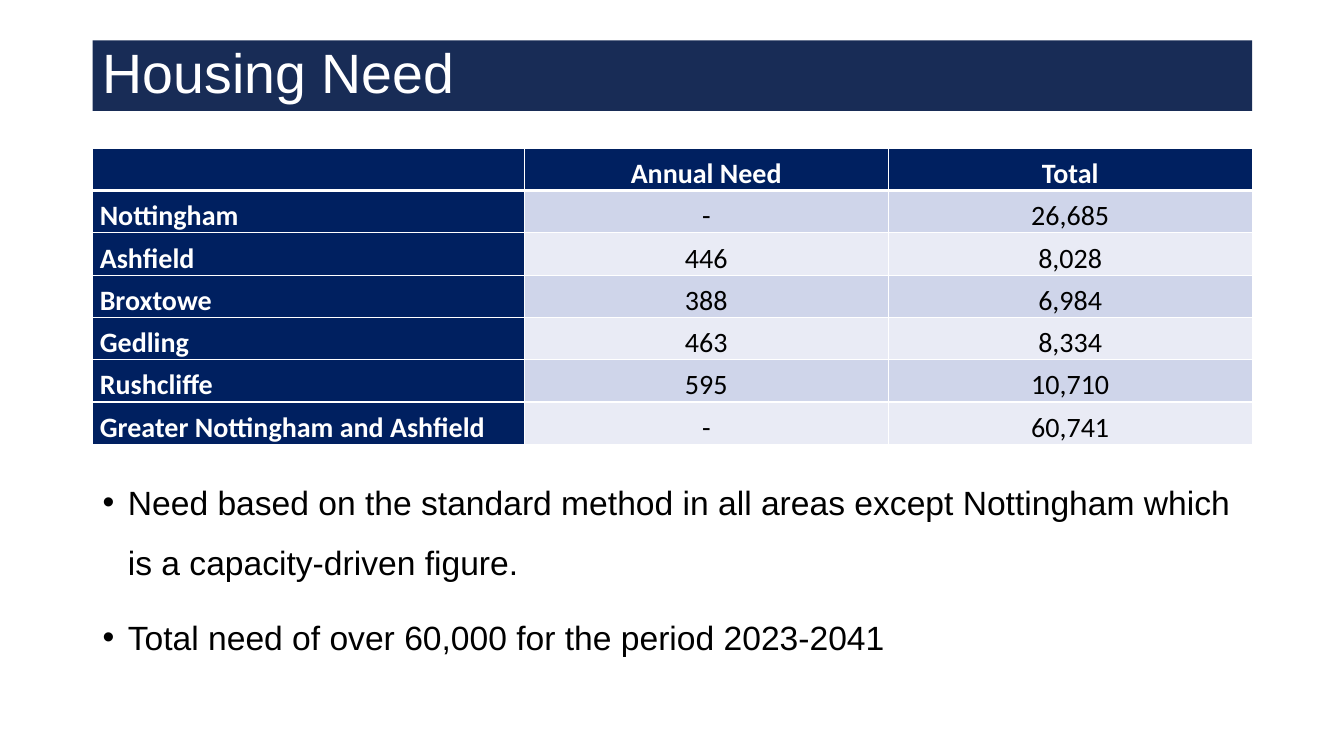
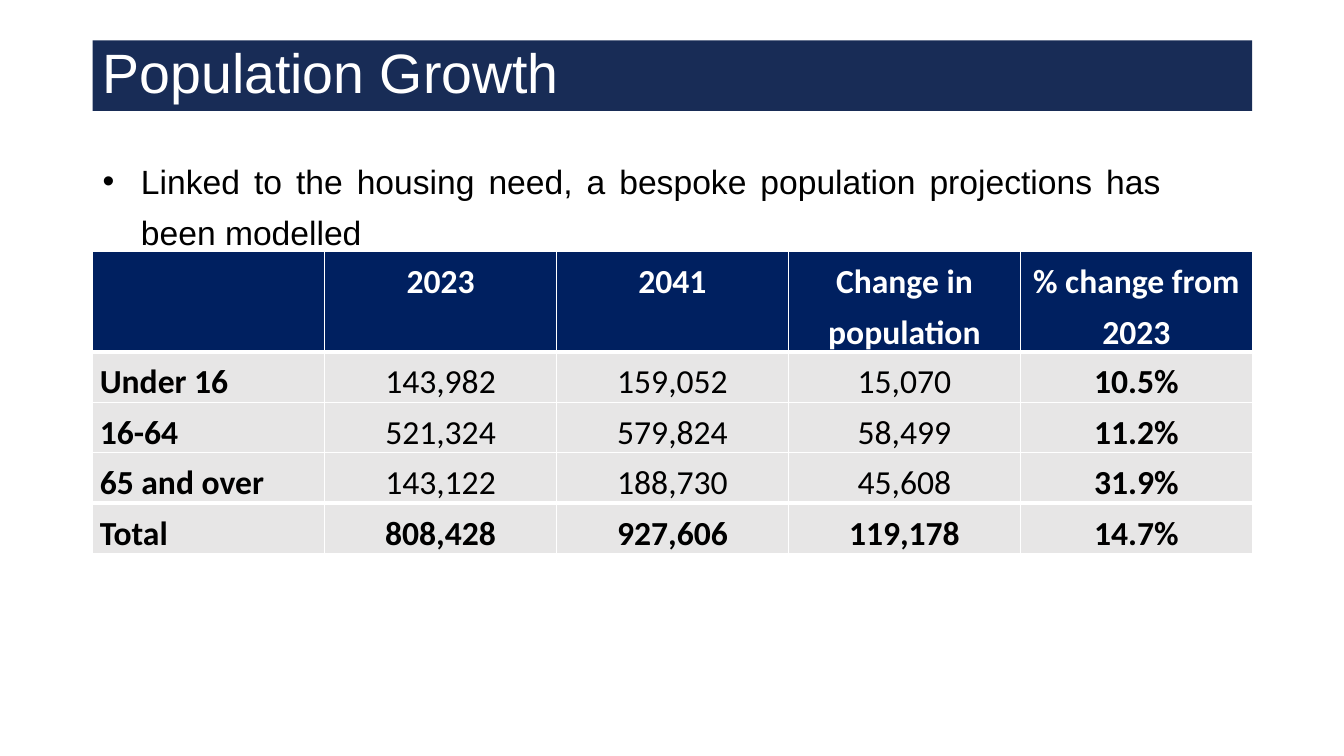
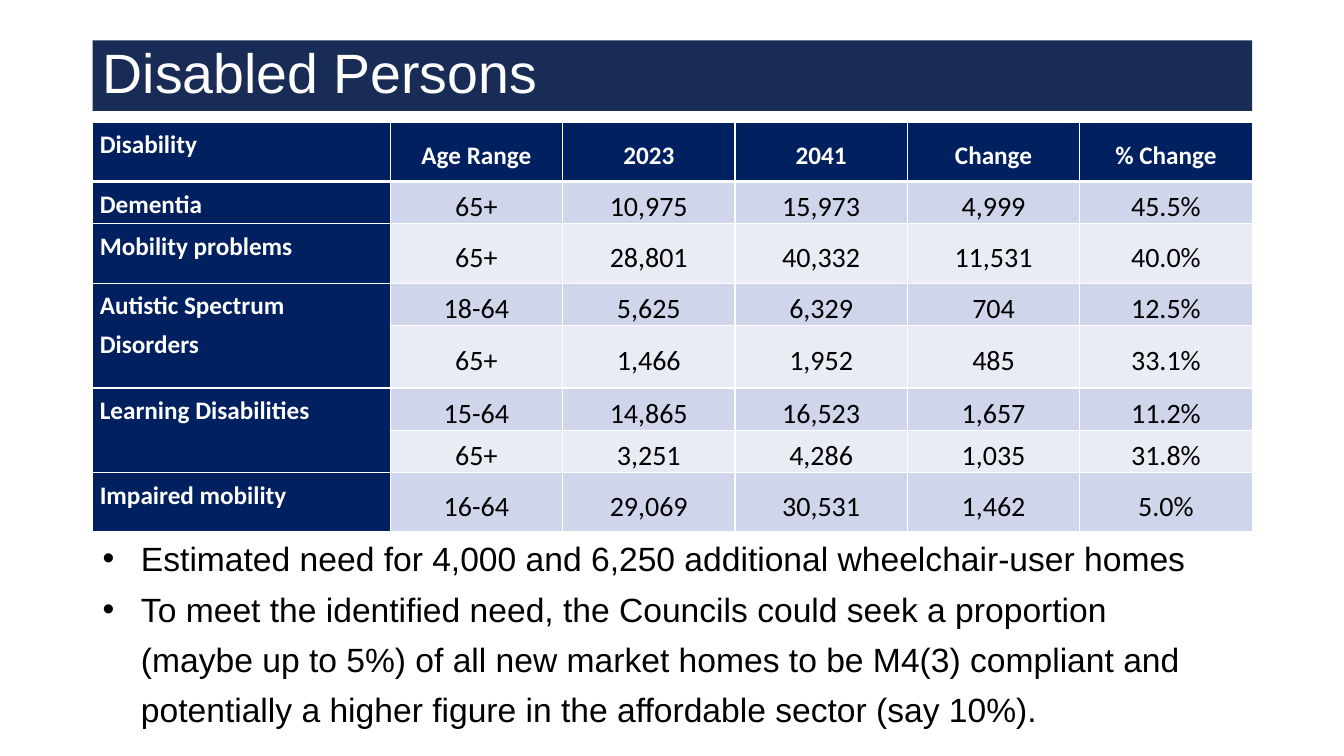
from pptx import Presentation
from pptx.dml.color import RGBColor
from pptx.enum.shapes import MSO_SHAPE
from pptx.enum.text import MSO_ANCHOR, PP_ALIGN
from pptx.oxml.ns import qn
from pptx.util import Pt
from lxml.etree import SubElement

PX = 9144
LEFT, WIDE = 92, 1150
NAVY, BAND, WHITE, BLACK = "002060", "182C56", "FFFFFF", "000000"
BLUES = ["CFD5EA", "E9EBF5"]
GREYS = ["E7E6E6", "E7E6E6"]
MID, TOP, LOW = MSO_ANCHOR.MIDDLE, MSO_ANCHOR.TOP, MSO_ANCHOR.BOTTOM


def hue(code):
    return RGBColor.from_string(code)


def put(par, text, size, color, font, bold=False, **style):
    for key, val in style.items():
        setattr(par, key, val)
    run = par.add_run()
    run.text = text
    for key, val in {"size": Pt(size), "name": font, "bold": bold}.items():
        setattr(run.font, key, val)
    run.font.color.rgb = hue(color)


pages = [
    {
        "title": "Housing Need",
        "box": (453, 1150, 237),
        "points": [
            "Need based on the standard method in all areas except Nottingham which is a capacity-driven figure.",
            "Total need of over 60,000 for the period 2023-2041",
        ],
        "indent": 25,
        "style": {"line_spacing": 1.5},
        "gap": 10,
        "top": 147,
        "cols": [428, 361, 361],
        "rows": [42] * 7,
        "data": [
            ["", "Annual Need", "Total"],
            ["Nottingham", "-", "26,685"],
            ["Ashfield", "446", "8,028"],
            ["Broxtowe", "388", "6,984"],
            ["Gedling", "463", "8,334"],
            ["Rushcliffe", "595", "10,710"],
            ["Greater Nottingham and Ashfield", "-", "60,741"],
        ],
        "fills": BLUES,
        "side": NAVY,
        "sizes": (20, 20),
        "anchors": (MID, MID),
        "spans": [],
        "heavy": [1],
        "strong": [],
    },
    {
        "title": "Population Growth",
        "box": (145, 1069, 452),
        "points": ["Linked to the housing need, a bespoke population projections has been modelled"],
        "indent": 38,
        "style": {"line_spacing": 1.25, "alignment": PP_ALIGN.JUSTIFY},
        "gap": 0,
        "top": 249,
        "cols": [230] * 5,
        "rows": [98] + [50] * 4,
        "data": [
            ["", "2023", "2041", "Change in population", "% change from 2023"],
            ["Under 16", "143,982", "159,052", "15,070", "10.5%"],
            ["16-64", "521,324", "579,824", "58,499", "11.2%"],
            ["65 and over", "143,122", "188,730", "45,608", "31.9%"],
            ["Total", "808,428", "927,606", "119,178", "14.7%"],
        ],
        "fills": GREYS,
        "side": GREYS[0],
        "sizes": (24, 24),
        "anchors": (TOP, LOW),
        "spans": [],
        "heavy": [1, 4],
        "strong": [4],
    },
    {
        "title": "Disabled Persons",
        "box": (519, 1095, 207),
        "points": [
            "Estimated need for 4,000 and 6,250 additional wheelchair-user homes",
            "To meet the identified need, the Councils could seek a proportion (maybe up to 5%) of all new market homes to be M4(3) compliant and potentially a higher figure in the affordable sector (say 10%).",
        ],
        "indent": 38,
        "style": {"line_spacing": 1.25},
        "gap": 0,
        "top": 121,
        "cols": [295] + [171] * 5,
        "rows": [59, 42, 59, 42, 62, 42, 42, 59],
        "data": [
            ["Disability", "Age Range", "2023", "2041", "Change", "% Change"],
            ["Dementia", "65+", "10,975", "15,973", "4,999", "45.5%"],
            ["Mobility problems", "65+", "28,801", "40,332", "11,531", "40.0%"],
            ["Autistic Spectrum Disorders", "18-64", "5,625", "6,329", "704", "12.5%"],
            ["", "65+", "1,466", "1,952", "485", "33.1%"],
            ["Learning Disabilities", "15-64", "14,865", "16,523", "1,657", "11.2%"],
            ["", "65+", "3,251", "4,286", "1,035", "31.8%"],
            ["Impaired mobility", "16-64", "29,069", "30,531", "1,462", "5.0%"],
        ],
        "fills": BLUES,
        "side": NAVY,
        "sizes": (18, 20),
        "anchors": (MID, MID),
        "spans": [3, 5],
        "heavy": [1],
        "strong": [],
    },
]

deck = Presentation()
deck.slide_width, deck.slide_height = 1333 * PX, 750 * PX

for page in pages:
    slide = deck.slides.add_slide(deck.slide_layouts[6])

    band = slide.shapes.add_shape(MSO_SHAPE.RECTANGLE, LEFT * PX, 40 * PX, WIDE * PX, 70 * PX)
    band.shadow.inherit = False
    band.fill.solid()
    band.fill.fore_color.rgb = hue(BAND)
    band.line.fill.background()
    band.text_frame.vertical_anchor = MID
    put(band.text_frame.paragraphs[0], page["title"], 39.6, WHITE, "Arial",
        alignment=PP_ALIGN.LEFT, line_spacing=0.9)

    top, wide, high = page["box"]
    frame = slide.shapes.add_textbox(LEFT * PX, top * PX, wide * PX, high * PX).text_frame
    frame.word_wrap = True
    for num, text in enumerate(page["points"]):
        par = frame.add_paragraph() if num else frame.paragraphs[0]
        props = par._p.get_or_add_pPr()
        inset = page["indent"] * PX
        props.set("marL", str(inset))
        props.set("indent", str(-inset))
        SubElement(props, qn("a:buFont"), typeface="Arial")
        SubElement(props, qn("a:buChar"), char="•")
        put(par, text, 24, BLACK, "Arial", space_before=Pt(page["gap"] if num else 0), **page["style"])

    data, cols, rows = page["data"], page["cols"], page["rows"]
    grid = slide.shapes.add_table(len(rows), len(cols), LEFT * PX, page["top"] * PX,
                                  sum(cols) * PX, sum(rows) * PX).table
    grid.first_row = grid.horz_banding = False
    for col, size in zip(grid.columns, cols):
        col.width = size * PX
    for row, size in zip(grid.rows, rows):
        row.height = size * PX
    for start in page["spans"]:
        grid.cell(start, 0).merge(grid.cell(start + 1, 0))

    for r, line in enumerate(data):
        for c, text in enumerate(line):
            cell = grid.cell(r, c)
            head, side = r == 0, c == 0
            edges = {"L": 1, "R": 1, "T": 3 if r in page["heavy"] else 1,
                     "B": 3 if r + 1 in page["heavy"] else 1}
            props = cell._tc.get_or_add_tcPr()
            for edge, size in edges.items():
                rule = SubElement(props, qn("a:ln" + edge), w=str(Pt(size)))
                SubElement(SubElement(rule, qn("a:solidFill")), qn("a:srgbClr"), val=WHITE)
            fill = NAVY if head else page["side"] if side else page["fills"][(r - 1) % 2]
            cell.fill.solid()
            cell.fill.fore_color.rgb = hue(fill)
            anchor = TOP if side else page["anchors"][0 if head else 1]
            form = {"margin_left": 7 * PX, "margin_right": 7 * PX, "margin_top": 0,
                    "margin_bottom": 0, "vertical_anchor": anchor}
            for key, val in form.items():
                setattr(cell, key, val)
            if text:
                put(cell.text_frame.paragraphs[0], text,
                    page["sizes"][0 if head or side else 1],
                    WHITE if fill == NAVY else BLACK, "Calibri",
                    bold=head or side or r in page["strong"] or (c == 4 and bool(page["strong"])),
                    alignment=PP_ALIGN.LEFT if side else PP_ALIGN.CENTER, line_spacing=1.25)

deck.save("out.pptx")
